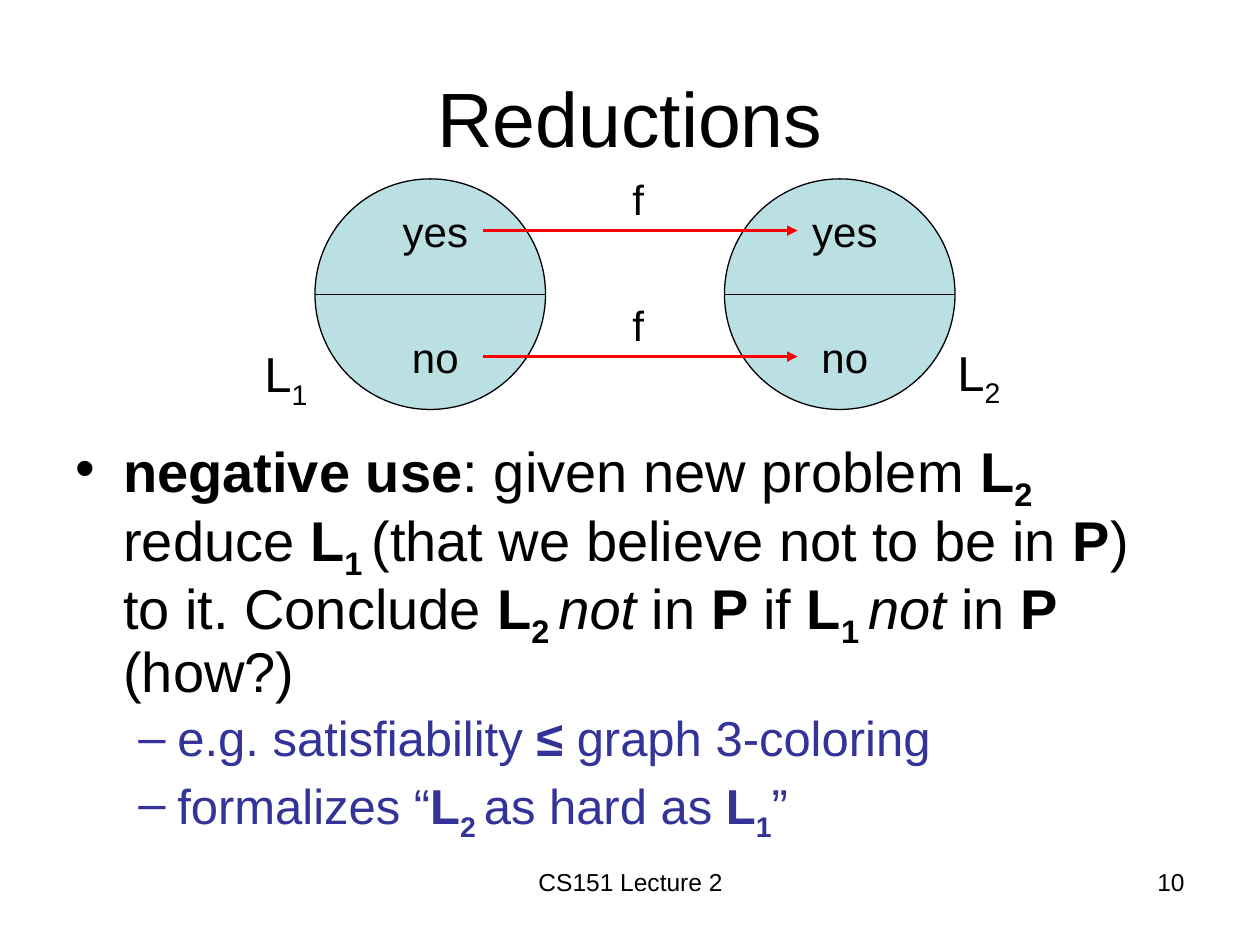
from pptx import Presentation
from pptx.dml.color import RGBColor
from pptx.enum.shapes import MSO_CONNECTOR, MSO_SHAPE
from pptx.enum.text import MSO_ANCHOR, PP_ALIGN
from pptx.oxml.ns import qn
from pptx.util import Inches, Pt
from lxml import etree

FONT = "Arial"
BLACK = "000000"
INDIGO = "333399"
PALE_TEAL = "BBE0E3"
RED = "FF0000"

DIAMETER = 1.83
CIRCLE_TOP = 1.42
CIRCLE_LEFTS = (2.5, 5.75)
ANSWERS = (("yes", 1.58), ("no", 2.58))

NEGATIVE_USE = [
    ("negative use", "bold"), ": given new problem ",
    ("L", "bold"), ("2", "bold sub"), " reduce ",
    ("L", "bold"), ("1 ", "bold sub"), "(that we believe not to be in ",
    ("P", "bold"), ") to it. Conclude ",
    ("L", "bold"), ("2 ", "bold sub"), ("not ", "italic"), "in",
    (" P ", "bold"), "if ",
    ("L", "bold"), ("1 ", "bold sub"), ("not ", "italic"), "in",
    (" P ", "bold"), "(how?)",
]
EXAMPLE = ["e.g. satisfiability ", ("≤", "bold"), " graph 3-coloring"]
FORMALIZES = [
    "formalizes “", ("L", "bold"), ("2 ", "bold sub"), "as hard as ",
    ("L", "bold"), ("1", "bold sub"), "”",
]


def rgb(color):
    return RGBColor.from_string(color)


def write_runs(paragraph, pieces, size, color=BLACK):
    for piece in pieces:
        words, style = (piece, "") if isinstance(piece, str) else piece
        run = paragraph.add_run()
        run.text = words
        run.font.name = FONT
        run.font.size = Pt(size)
        run.font.color.rgb = rgb(color)
        run.font.bold = "bold" in style
        run.font.italic = "italic" in style
        if "sub" in style:
            run._r.get_or_add_rPr().set("baseline", "-25000")


def add_frame(slide, left, top, width, height, anchor=MSO_ANCHOR.TOP):
    box = slide.shapes.add_textbox(
        Inches(left), Inches(top), Inches(width), Inches(height))
    frame = box.text_frame
    frame.word_wrap = True
    frame.vertical_anchor = anchor
    return frame


def add_text(slide, text, left, top, width, height, size=24,
             align=PP_ALIGN.LEFT, anchor=MSO_ANCHOR.TOP):
    paragraph = add_frame(slide, left, top, width, height, anchor).paragraphs[0]
    paragraph.alignment = align
    write_runs(paragraph, [text] if isinstance(text, str) else text, size)


def write_bullet(paragraph, pieces, mark, size, color, indent, hanging, level=0):
    paragraph.level = level
    paragraph.line_spacing = 0.9
    paragraph.space_before = Pt(size * 0.2)
    properties = paragraph._p.get_or_add_pPr()
    properties.set("marL", str(Inches(indent)))
    properties.set("indent", str(-Inches(hanging)))
    etree.SubElement(properties, qn("a:buFont")).set("typeface", FONT)
    etree.SubElement(properties, qn("a:buChar")).set("char", mark)
    write_runs(paragraph, pieces, size, color)


def add_line(slide, left, right, y, color=BLACK, weight=0.75, arrow=False):
    line = slide.shapes.add_connector(
        MSO_CONNECTOR.STRAIGHT, Inches(left), Inches(y), Inches(right), Inches(y))
    line.line.color.rgb = rgb(color)
    line.line.width = Pt(weight)
    if arrow:
        tail = etree.SubElement(line.line._get_or_add_ln(), qn("a:tailEnd"))
        tail.set("type", "triangle")
    etree.SubElement(line._element.spPr, qn("a:effectLst"))


def add_language(slide, left):
    circle = slide.shapes.add_shape(
        MSO_SHAPE.OVAL, Inches(left), Inches(CIRCLE_TOP),
        Inches(DIAMETER), Inches(DIAMETER))
    circle.shadow.inherit = False
    circle.fill.solid()
    circle.fill.fore_color.rgb = rgb(PALE_TEAL)
    circle.line.color.rgb = rgb(BLACK)
    circle.line.width = Pt(0.75)
    add_line(slide, left, left + DIAMETER, CIRCLE_TOP + DIAMETER / 2)
    for answer, top in ANSWERS:
        add_text(slide, answer, left + 0.58, top, 0.75, 0.5,
                 align=PP_ALIGN.CENTER)


def add_mapping(slide, answer_top):
    add_line(slide, 3.83, 6.33, answer_top + 0.25, RED, 2, arrow=True)
    add_text(slide, "f", 4.92, answer_top - 0.25, 0.58, 0.5)


def add_body(slide):
    frame = add_frame(slide, 0.5, 3.42, 9, 3.28)
    write_bullet(frame.paragraphs[0], NEGATIVE_USE, "•", 32, BLACK, 0.38, 0.38)
    for pieces in (EXAMPLE, FORMALIZES):
        write_bullet(frame.add_paragraph(), pieces, "–", 28, INDIGO,
                     0.81, 0.31, level=1)


def main():
    deck = Presentation()
    deck.slide_width = Inches(10)
    deck.slide_height = Inches(7.5)
    slide = deck.slides.add_slide(deck.slide_layouts[6])

    add_text(slide, "Reductions", 0.5, 0.3, 9, 1.25, size=44,
             align=PP_ALIGN.CENTER, anchor=MSO_ANCHOR.MIDDLE)
    add_body(slide)
    for left in CIRCLE_LEFTS:
        add_language(slide, left)
    for _, top in ANSWERS:
        add_mapping(slide, top)
    for index, left, top in (("1", 2, 2.68), ("2", 7.5, 2.67)):
        add_text(slide, ["L", (index, "sub")], left, top, 0.58, 0.57, size=28)
    add_text(slide, "CS151 Lecture 2", 3.42, 6.83, 3.17, 0.52, size=14,
             align=PP_ALIGN.CENTER)
    add_text(slide, "10", 7.17, 6.83, 2.33, 0.52, size=14,
             align=PP_ALIGN.RIGHT)

    deck.save("out.pptx")


if __name__ == "__main__":
    main()
